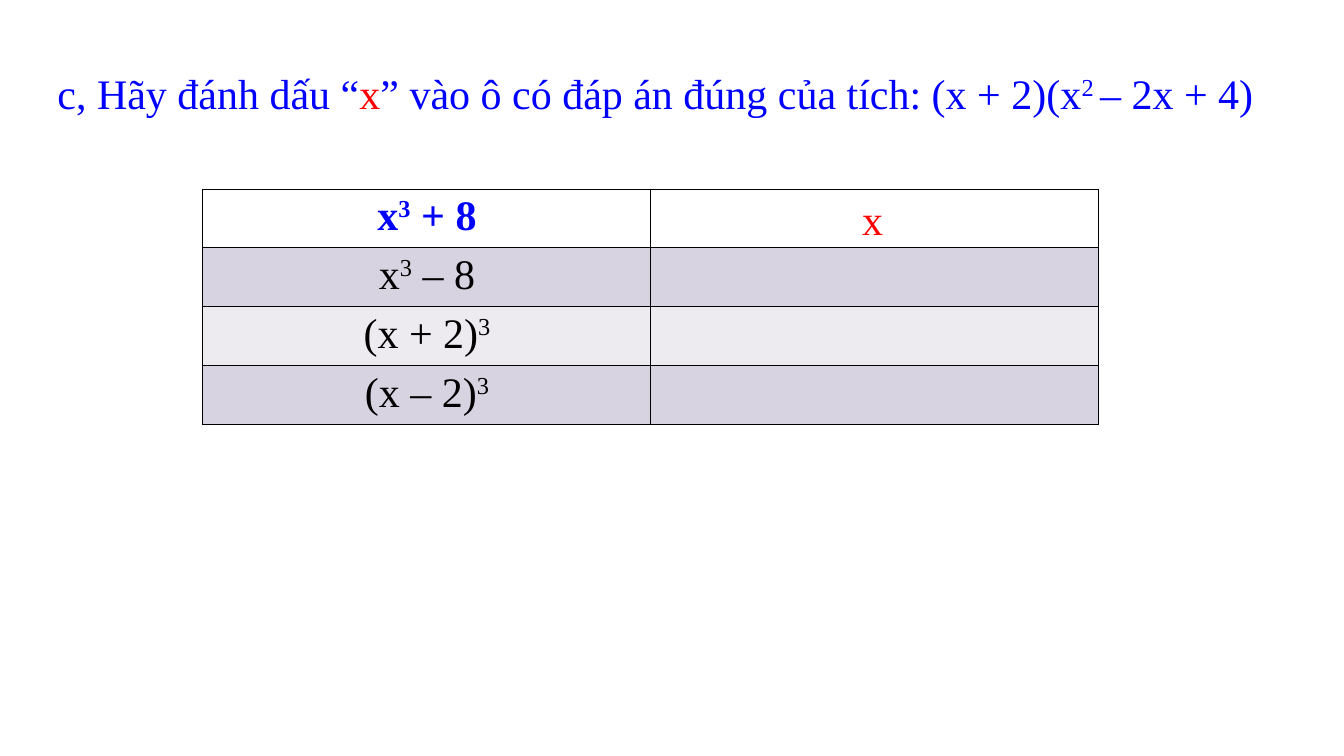
from lxml import etree
from pptx import Presentation
from pptx.dml.color import RGBColor
from pptx.enum.text import MSO_ANCHOR, MSO_AUTO_SIZE, PP_ALIGN
from pptx.oxml.ns import qn
from pptx.util import Emu, Pt

LEFT, CENTER = PP_ALIGN.LEFT, PP_ALIGN.CENTER
TOP = MSO_ANCHOR.TOP
FIT_SHAPE = MSO_AUTO_SIZE.SHAPE_TO_FIT_TEXT
PIXELS_PER_INCH = 84
TITLE_ONLY = 5
FONT, SIZE = "Times New Roman", 36
COLORS = {"blue": "0000FF", "red": "FF0000", "black": "000000",
          "white": "FFFFFF", "band": "D8D3E0", "light": "EDEAF0"}

QUESTION = [("c, Hãy đánh dấu “", "blue", False), ("x", "red", False),
            ("” vào ô có đáp án đúng của tích: (x + 2)(x", "blue", False),
            ("2 ", "blue", True), ("– 2x + 4)", "blue", False)]
# Base, exponent, remainder, text color, bold, row fill
ANSWERS = [("x", "3", " + 8", "blue", True, "white"),
           ("x", "3", " – 8", "black", False, "band"),
           ("(x + 2)", "3", "", "black", False, "light"),
           ("(x – 2)", "3", "", "black", False, "band")]


def px(value):
    return Emu(round(value * 914400 / PIXELS_PER_INCH))


def rgb(name):
    return RGBColor.from_string(COLORS[name])


def write_runs(paragraph, parts, alignment, bold=False):
    """Add (text, color, superscript) parts to a paragraph."""
    paragraph.alignment = alignment
    for text, color, superscript in parts:
        run = paragraph.add_run()
        run.text = text
        run.font.name, run.font.size, run.font.bold = FONT, Pt(SIZE), bold
        run.font.color.rgb = rgb(color)
        if superscript:
            run._r.get_or_add_rPr().set("baseline", "30000")


def add_borders(cell):
    properties = cell._tc.get_or_add_tcPr()
    for side in ("a:lnL", "a:lnR", "a:lnT", "a:lnB"):
        line = etree.SubElement(properties, qn(side), w=str(Pt(1)))
        fill = etree.SubElement(line, qn("a:solidFill"))
        etree.SubElement(fill, qn("a:srgbClr"), val=COLORS["black"])


def place_question(slide, left, top, width, height):
    title = slide.shapes.title
    title.left, title.top = px(left), px(top)
    title.width, title.height = px(width), px(height)
    frame = title.text_frame
    frame.word_wrap = True
    frame.auto_size = FIT_SHAPE
    frame.vertical_anchor = TOP
    write_runs(frame.paragraphs[0], QUESTION, LEFT)


def add_answers(slide, left, top, width, height):
    table = slide.shapes.add_table(len(ANSWERS), 2, px(left), px(top),
                                   px(width), px(height)).table
    table.first_row = table.horz_banding = False
    for row, (base, exponent, rest, color, bold, fill) in enumerate(ANSWERS):
        for cell in table.rows[row].cells:
            add_borders(cell)
            cell.fill.solid()
            cell.fill.fore_color.rgb = rgb(fill)
        parts = [(base, color, False), (exponent, color, True)]
        if rest:
            parts.append((rest, color, False))
        paragraph = table.cell(row, 0).text_frame.paragraphs[0]
        write_runs(paragraph, parts, CENTER, bold)


def add_mark(slide, left, top, width, height):
    box = slide.shapes.add_textbox(px(left), px(top), px(width), px(height))
    box.text_frame.word_wrap = True
    box.text_frame.auto_size = FIT_SHAPE
    write_runs(box.text_frame.paragraphs[0], [("x", "red", False)], LEFT)


def main():
    presentation = Presentation()
    presentation.slide_width, presentation.slide_height = px(1344), px(756)
    slide = presentation.slides.add_slide(presentation.slide_layouts[TITLE_ONLY])
    place_question(slide, 49, 63, 1239, 60)
    add_answers(slide, 203, 189, 896, 235)
    # The tick sits over the first row, right of the correct answer
    add_mark(slide, 854, 189, 49, 60)
    presentation.save("out.pptx")


if __name__ == "__main__":
    main()
